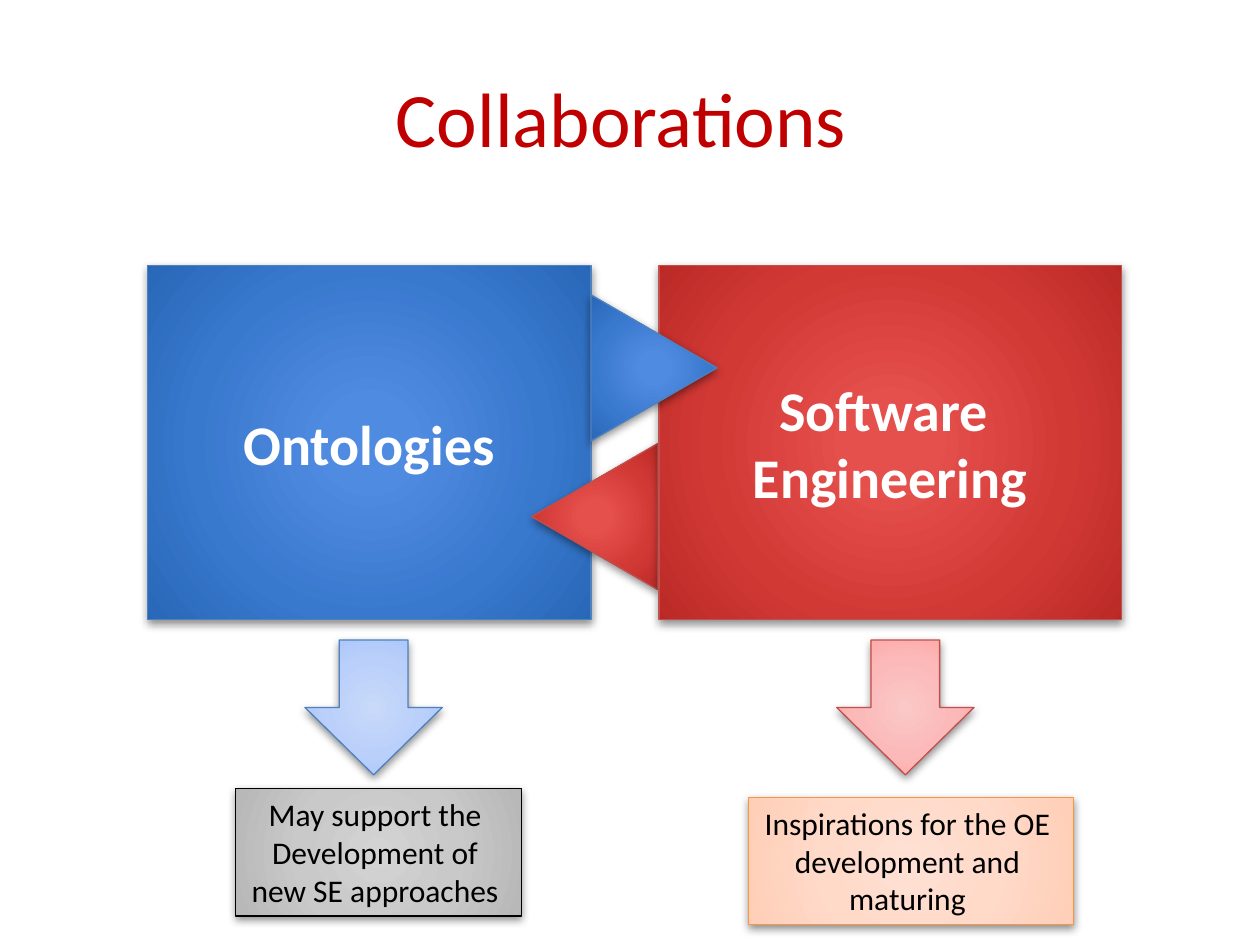
from dataclasses import dataclass

from lxml import etree
from pptx import Presentation
from pptx.dml.color import RGBColor
from pptx.enum.shapes import MSO_SHAPE
from pptx.enum.text import MSO_ANCHOR, MSO_AUTO_SIZE, PP_ALIGN
from pptx.oxml.ns import qn
from pptx.util import Inches, Pt

RECTANGLE = MSO_SHAPE.RECTANGLE
TRIANGLE = MSO_SHAPE.ISOSCELES_TRIANGLE
DOWN_ARROW = MSO_SHAPE.DOWN_ARROW
CENTER = PP_ALIGN.CENTER
MIDDLE, TOP = MSO_ANCHOR.MIDDLE, MSO_ANCHOR.TOP
GROW = MSO_AUTO_SIZE.SHAPE_TO_FIT_TEXT


@dataclass(frozen=True)
class Paint:
    line: str
    stops: tuple  # (percent, colour), from the centre outwards


@dataclass(frozen=True)
class Theme:
    font: str = "Calibri"
    title_size: int = 44
    topic_size: int = 32
    note_size: int = 18
    title: str = "C00000"
    light: str = "FFFFFF"
    dark: str = "000000"
    line_width: float = 0.75
    blue: Paint = Paint("4F81BD", ((0, "4F8BE2"), (15, "4F8BE1"), (62, "3878CD"),
                                   (97, "2A69B9"), (100, "2166B9")))
    red: Paint = Paint("C0504D", ((0, "E6504C"), (15, "E54F4C"), (62, "D13935"),
                                  (97, "BD2B28"), (100, "BD221E")))
    pale_blue: Paint = Paint("4F81BD", ((0, "C8D9FA"), (50, "BAD0FA"),
                                        (97, "A3C1FA"), (100, "99BCFD")))
    pale_red: Paint = Paint("C0504D", ((0, "FBC7C7"), (50, "FBBAB9"),
                                       (97, "FDA2A1"), (100, "FF9A98")))
    grey: Paint = Paint("000000", ((0, "D3D3D3"), (50, "C9C9C9"),
                                   (97, "B8B8B8"), (100, "B2B2B2")))
    orange: Paint = Paint("F79646", ((0, "FFE0D3"), (50, "FFDAC9"),
                                     (97, "FFCFB8"), (100, "FFCBB3")))


def add_node(parent, tag, **attributes):
    return etree.SubElement(parent, qn(tag), {k: str(v) for k, v in attributes.items()})


class SlideBuilder:
    def __init__(self, page, theme):
        self.page = page
        self.theme = theme

    def set_text(self, frame, text, size, colour, bold=False):
        frame.text = text
        for para in frame.paragraphs:
            para.alignment = CENTER
            for span in para.runs:
                span.font.name = self.theme.font
                span.font.size = Pt(size)
                span.font.bold = bold
                span.font.color.rgb = RGBColor.from_string(colour)

    def title(self, text, left, top, width, height):
        box = self.page.shapes.title
        box.left, box.top = Inches(left), Inches(top)
        box.width, box.height = Inches(width), Inches(height)
        box.text_frame.vertical_anchor = MIDDLE
        self.set_text(box.text_frame, text, self.theme.title_size, self.theme.title)

    def shape(self, kind, paint, left, top, width, height, rotation=0):
        box = self.page.shapes.add_shape(
            kind, Inches(left), Inches(top), Inches(width), Inches(height))
        box.rotation = rotation
        box.line.color.rgb = RGBColor.from_string(paint.line)
        box.line.width = Pt(self.theme.line_width)
        self.radial_fill(box, paint.stops)
        self.soft_shadow(box)
        return box

    def radial_fill(self, box, stops):
        box.fill.solid()
        solid = box._element.spPr.find(qn("a:solidFill"))
        gradient = etree.Element(qn("a:gradFill"), rotWithShape="1")
        stop_list = add_node(gradient, "a:gsLst")
        for percent, colour in stops:
            stop = add_node(stop_list, "a:gs", pos=percent * 1000)
            add_node(stop, "a:srgbClr", val=colour)
        circle = add_node(gradient, "a:path", path="circle")
        add_node(circle, "a:fillToRect", l=50000, t=50000, r=50000, b=50000)
        solid.getparent().replace(solid, gradient)

    def soft_shadow(self, box):
        box.shadow.inherit = False
        effects = box._element.spPr.find(qn("a:effectLst"))
        shadow = add_node(effects, "a:outerShdw", blurRad=Pt(5), dist=Pt(2),
                          dir=90 * 60000, rotWithShape=0)
        colour = add_node(shadow, "a:srgbClr", val=self.theme.dark)
        add_node(colour, "a:alpha", val=43000)

    def topic(self, text, paint, left, top, width, height):
        box = self.shape(RECTANGLE, paint, left, top, width, height)
        box.text_frame.vertical_anchor = MIDDLE
        self.set_text(box.text_frame, text, self.theme.topic_size, self.theme.light, bold=True)

    def note(self, text, paint, left, top, width, height):
        box = self.shape(RECTANGLE, paint, left, top, width, height)
        frame = box.text_frame
        frame.vertical_anchor = TOP
        frame.word_wrap = False
        frame.auto_size = GROW
        self.set_text(frame, text, self.theme.note_size, self.theme.dark)


def main():
    deck = Presentation()
    deck.slide_width, deck.slide_height = Inches(10), Inches(7.5)
    theme = Theme()
    slide = SlideBuilder(deck.slides.add_slide(deck.slide_layouts[5]), theme)

    slide.title("Collaborations ", 0.5, 0.3, 9, 1.25)

    # Two topics, each pointing into the other
    topic_top, topic_height = 2.11, 2.81
    slide.topic("Ontologies", theme.blue, 1.17, topic_top, 3.52, topic_height)
    slide.shape(TRIANGLE, theme.red, 4.14, 3.6, 1.16, 1, rotation=270)
    slide.topic("Software \nEngineering", theme.red, 5.23, topic_top, 3.67, topic_height)
    slide.shape(TRIANGLE, theme.blue, 4.61, 2.42, 1.16, 1, rotation=90)

    # What each topic gives
    slide.note("May support the \nDevelopment of \nnew SE approaches ",
               theme.grey, 1.87, 6.26, 2.27, 1.01)
    slide.note("Inspirations for the OE \ndevelopment and \nmaturing ",
               theme.orange, 5.94, 6.33, 2.58, 1.01)

    # Arrows from topics to notes
    for left, paint in ((2.42, theme.pale_blue), (6.64, theme.pale_red)):
        slide.shape(DOWN_ARROW, paint, left, 5.08, 1.09, 1.07)

    deck.save("out.pptx")


if __name__ == "__main__":
    main()
